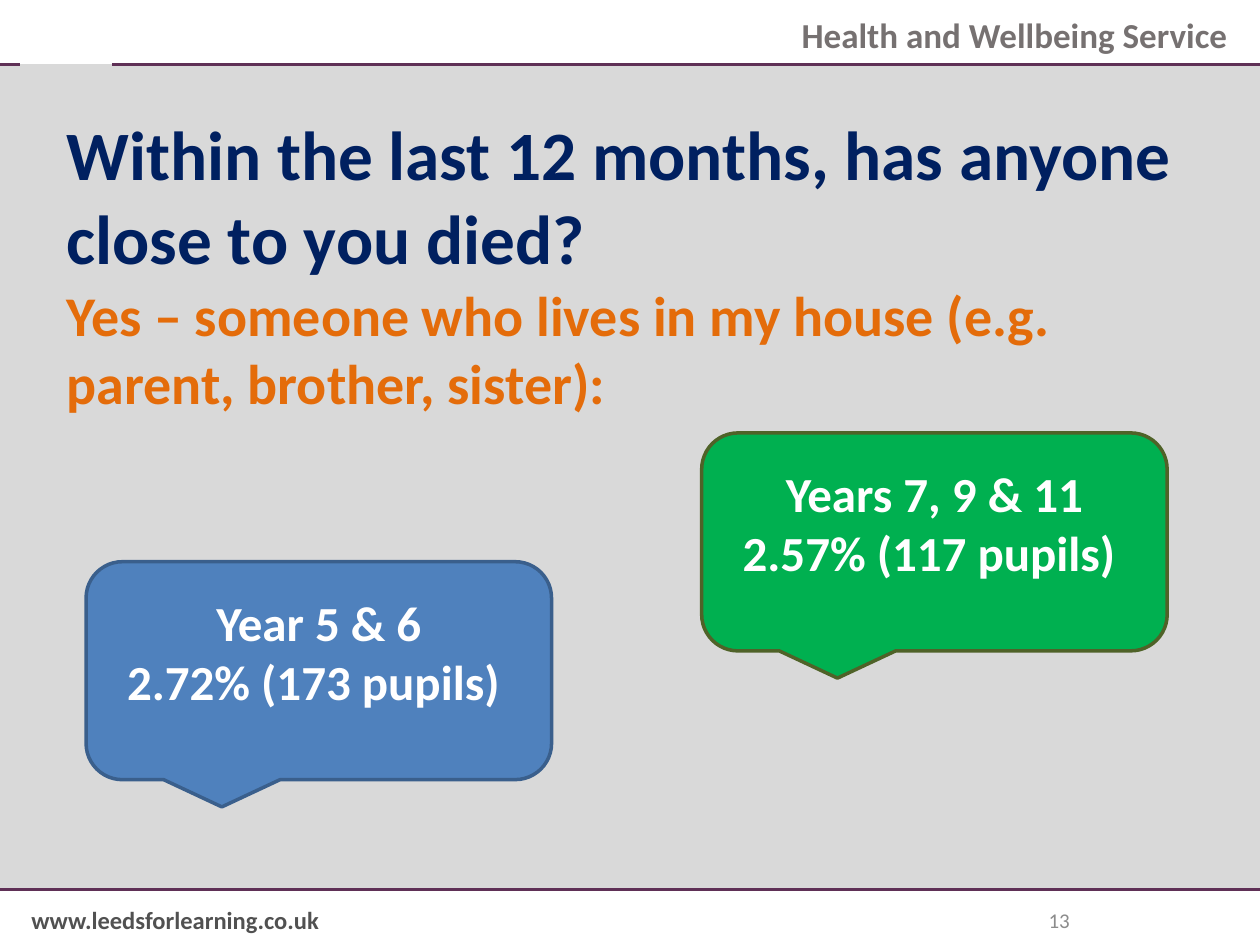
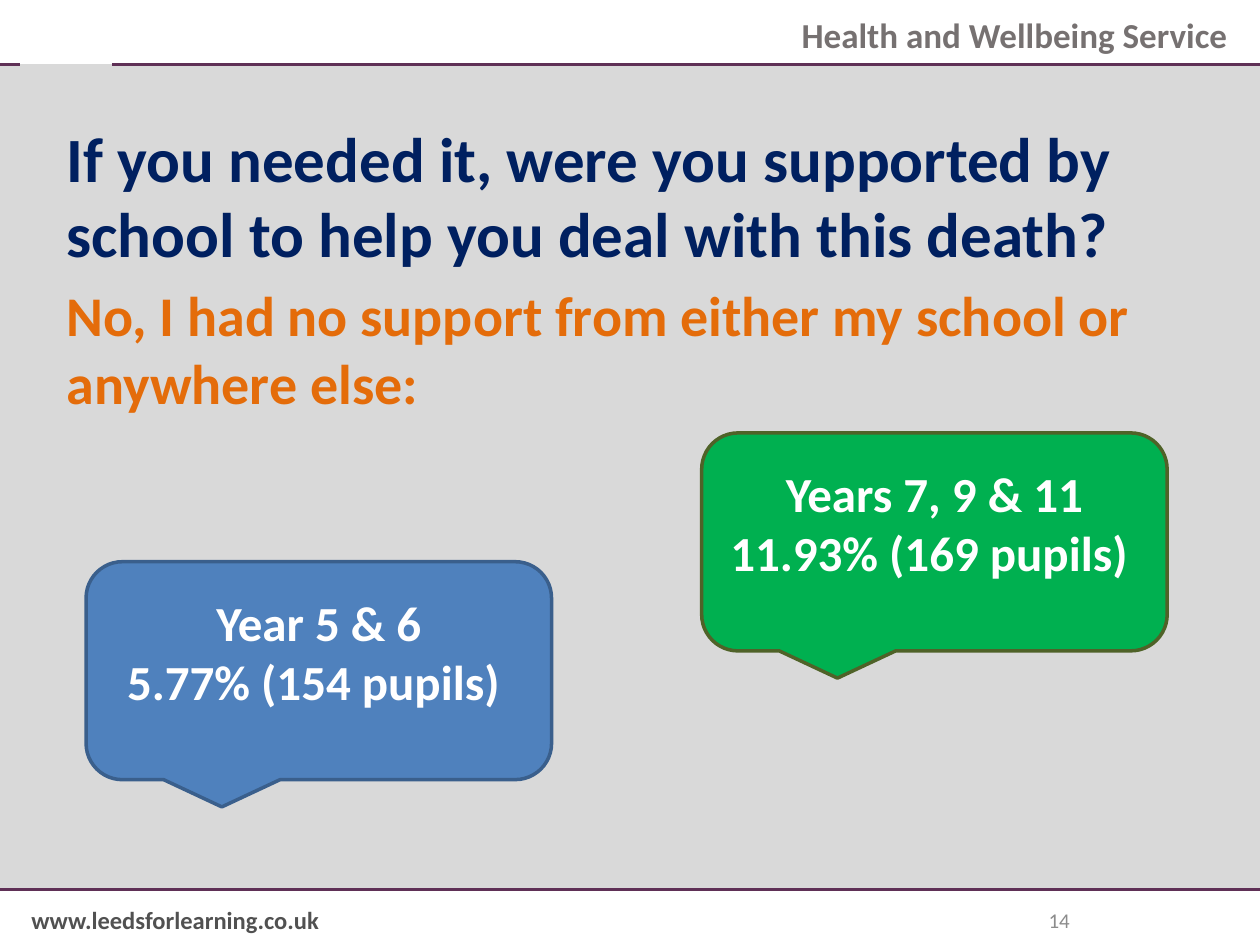
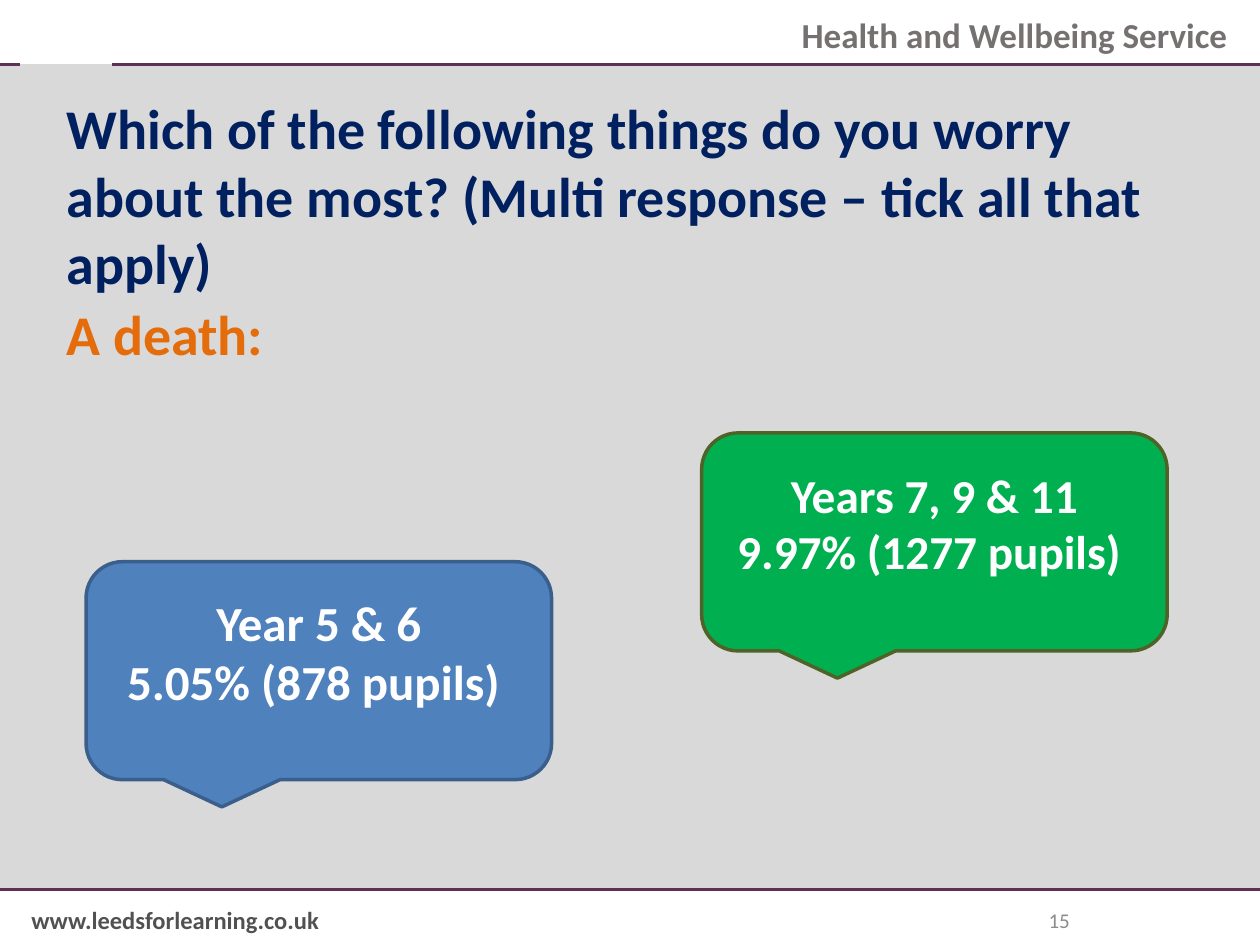
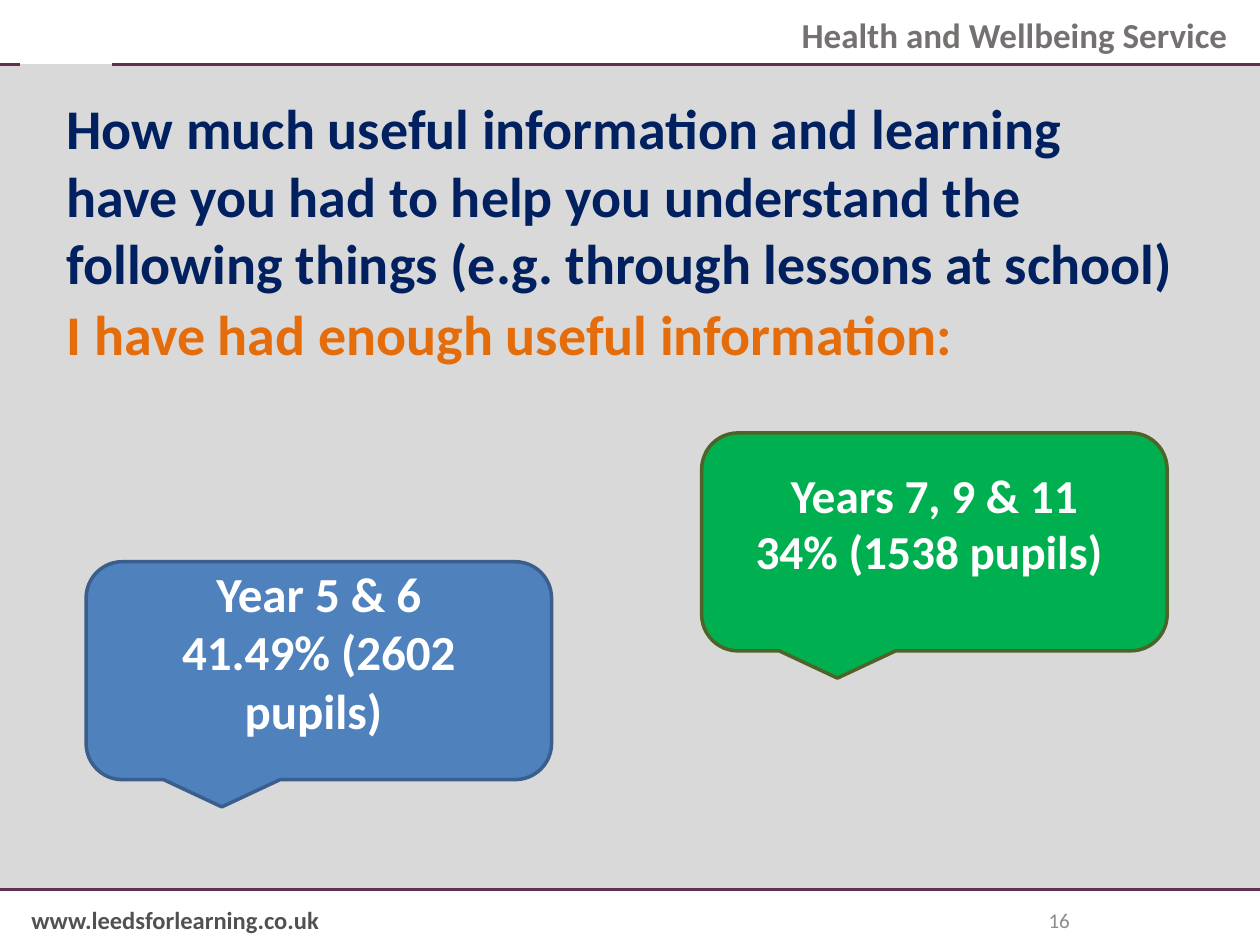
"""Build the four bereavement survey slides."""
import lxml.etree
import pptx
import pptx.dml.color
import pptx.enum.shapes
import pptx.enum.text
import pptx.oxml.ns
import pptx.util

Pt = pptx.util.Pt
ALIGN = pptx.enum.text.PP_ALIGN
ANCHOR = pptx.enum.text.MSO_ANCHOR
SHAPE = pptx.enum.shapes.MSO_SHAPE

WIDTH, HEIGHT = 720, 540
HEADER_Y, FOOTER_Y = 36.72, 508.32
FIRST_PAGE = 13
CALLOUT_SIZE = (266, 124.56)
FONT = "Calibri"
WHITE, PANEL, PLUM = "FFFFFF", "D9D9D9", "5F3056"
HEADER_GREY, ADDRESS_GREY, PAGE_GREY = "767171", "515151", "8C8C8C"
NAVY, ORANGE = "002060", "E46C0A"
BLUE, BLUE_EDGE = "4F81BD", "3A5F8C"
GREEN, GREEN_EDGE = "00B050", "4F6228"

QUESTIONS = [
    ("Within the last 12 months, has anyone close to you died?", 39.6,
     "Yes – someone who lives in my house (e.g. parent, brother, sister):", 156.96,
     "2.72% (173 pupils) ", "2.57% (117 pupils) ", 28),
    ("If you needed it, were you supported by school to help you deal with this death?", 36,
     "No, I had no support from either my school or anywhere else:", 156.96,
     "5.77% (154 pupils) ", "11.93% (169 pupils) ", 28),
    ("Which of the following things do you worry about the most? "
     "(Multi response – tick all that apply)", 32,
     "A death:", 167.76,
     "5.05% (878 pupils) ", "9.97% (1277 pupils) ", 27),
    ("How much useful information and learning have you had to help you understand "
     "the following things (e.g. through lessons at school)", 32,
     "I have had enough useful information:", 167.76,
     "41.49% (2602 pupils) ", "34% (1538 pupils) ", 27),
]


def color(value):
    """Turn a hex string into a colour."""
    return pptx.dml.color.RGBColor.from_string(value)


class Deck:
    """Hold the presentation, its style and the current slide."""

    def __init__(self):
        """Start a presentation with the shared slide size."""
        self.presentation = pptx.Presentation()
        self.presentation.slide_width = Pt(WIDTH)
        self.presentation.slide_height = Pt(HEIGHT)
        self.slide = None

    def fill_text(self, frame, lines, size, ink, bold=True, align=ALIGN.LEFT, anchor=ANCHOR.TOP):
        """Fill a text frame with equally styled paragraphs."""
        frame.word_wrap = True
        frame.vertical_anchor = anchor
        for index, line in enumerate(lines):
            paragraph = frame.add_paragraph() if index else frame.paragraphs[0]
            paragraph.text = line
            paragraph.alignment = align
            paragraph.font.name = FONT
            paragraph.font.size = Pt(size)
            paragraph.font.bold = bold
            paragraph.font.color.rgb = color(ink)

    def text(self, box, line, size, ink, **style):
        """Add a text box holding one paragraph."""
        frame = self.slide.shapes.add_textbox(*map(Pt, box)).text_frame
        self.fill_text(frame, [line], size, ink, **style)

    def rule(self, left, right, y):
        """Add a horizontal plum line."""
        rule = self.slide.shapes.add_connector(
            pptx.enum.shapes.MSO_CONNECTOR.STRAIGHT, Pt(left), Pt(y), Pt(right), Pt(y))
        rule.line.color.rgb = color(PLUM)
        rule.line.width = Pt(1.5)
        lxml.etree.SubElement(rule._element.spPr, pptx.oxml.ns.qn("a:effectLst"))

    def shape(self, kind, box, fill, edge=None):
        """Add a filled preset shape with an optional outline."""
        shape = self.slide.shapes.add_shape(kind, *map(Pt, box))
        shape.shadow.inherit = False
        shape.fill.solid()
        shape.fill.fore_color.rgb = color(fill)
        if edge:
            shape.line.color.rgb = color(edge)
            shape.line.width = Pt(2)
        else:
            shape.line.fill.background()
        return shape

    def callout(self, left, top, fill, edge, lines, size):
        """Add a speech bubble with its text raised above the middle."""
        bubble = self.shape(SHAPE.ROUNDED_RECTANGULAR_CALLOUT,
                            (left, top, *CALLOUT_SIZE), fill, edge)
        bubble.text_frame.margin_bottom = Pt(25.6)
        self.fill_text(bubble.text_frame, lines, size, WHITE,
                       align=ALIGN.CENTER, anchor=ANCHOR.MIDDLE)

    def start_slide(self, page):
        """Add a slide with the shared panel, header and footer."""
        self.slide = self.presentation.slides.add_slide(self.presentation.slide_layouts[6])
        self.shape(SHAPE.RECTANGLE, (0, HEADER_Y, WIDTH, FOOTER_Y - HEADER_Y), PANEL)
        self.text((399.6, 4.32, 308.88, 31.68), "Health and Wellbeing Service",
                  20, HEADER_GREY, align=ALIGN.RIGHT)
        self.text((10.8, 513.36, 207.36, 24.48), "www.leedsforlearning.co.uk",
                  14, ADDRESS_GREY)
        self.rule(64, WIDTH, HEADER_Y)
        self.rule(0, 11.5, HEADER_Y)
        self.rule(0, WIDTH, FOOTER_Y)
        self.text((450.72, 511.2, 167.76, 28.8), str(page), 12, PAGE_GREY,
                  bold=False, align=ALIGN.RIGHT, anchor=ANCHOR.MIDDLE)


def main():
    """Build and save every question slide."""
    deck = Deck()
    for page, content in enumerate(QUESTIONS, FIRST_PAGE):
        question, question_size, answer, answer_top, primary, secondary, secondary_size = content
        deck.start_slide(page)
        deck.text((30.96, 66.24, 648, 90), question, question_size, NAVY, anchor=ANCHOR.MIDDLE)
        deck.text((30.96, answer_top, 648, 356.4), answer, 32, ORANGE)
        deck.callout(49.2, 321, BLUE, BLUE_EDGE, ["Year 5 & 6", primary], 28)
        deck.callout(401, 247.4, GREEN, GREEN_EDGE,
                     ["Years 7, 9 & 11", secondary], secondary_size)
    deck.presentation.save("out.pptx")


if __name__ == "__main__":
    main()
